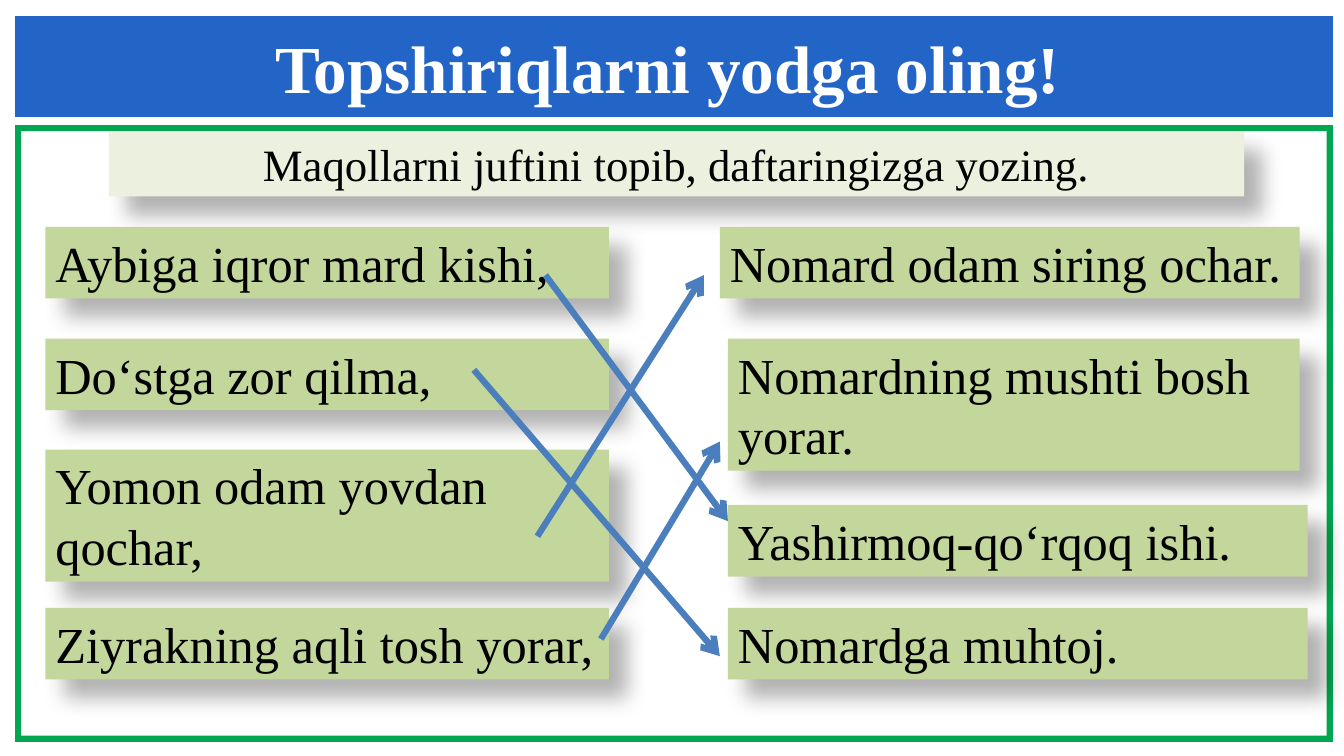
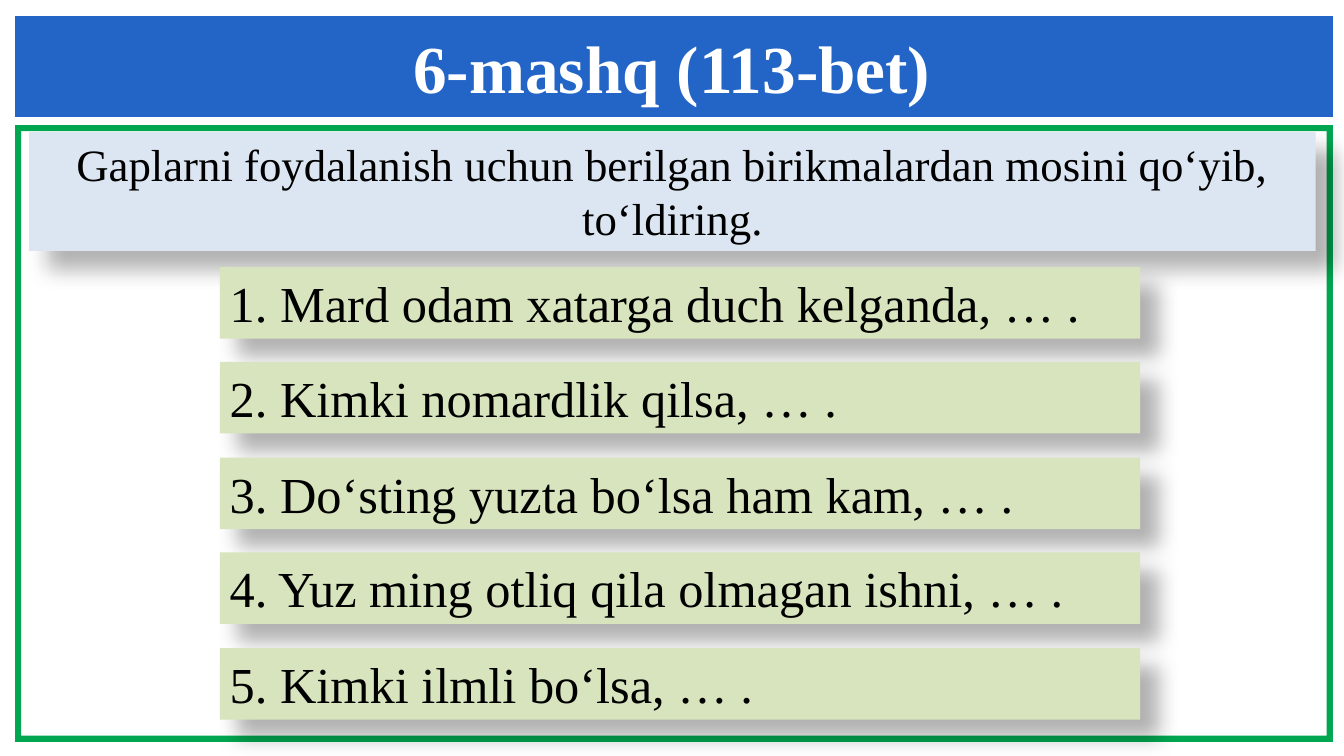
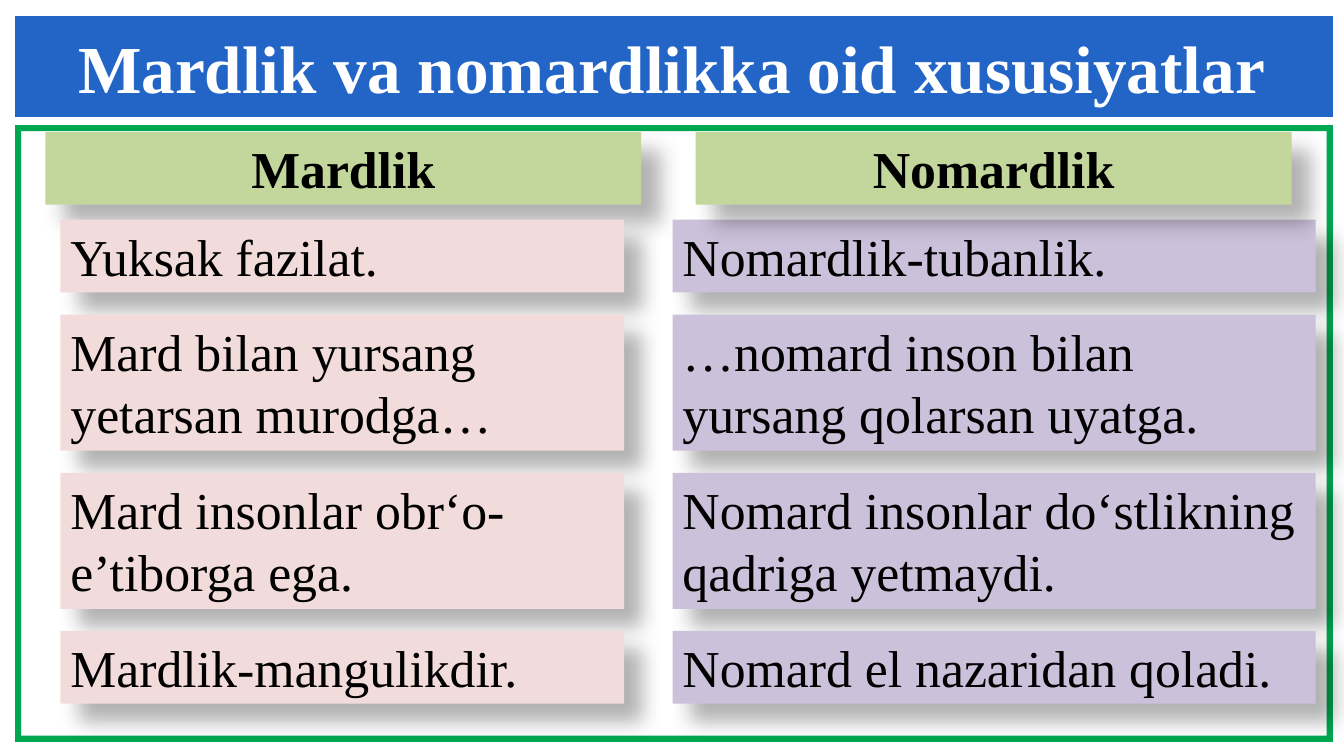
from dataclasses import dataclass

from lxml import etree
from pptx import Presentation
from pptx.dml.color import RGBColor
from pptx.enum.shapes import MSO_CONNECTOR, MSO_SHAPE
from pptx.enum.text import MSO_ANCHOR, MSO_AUTO_SIZE, PP_ALIGN
from pptx.oxml.ns import qn
from pptx.util import Pt

RECT, FRAME = MSO_SHAPE.RECTANGLE, MSO_SHAPE.FRAME
LINE = MSO_CONNECTOR.STRAIGHT
LEFT, MID = PP_ALIGN.LEFT, PP_ALIGN.CENTER
TOP = MSO_ANCHOR.TOP
GROW = MSO_AUTO_SIZE.SHAPE_TO_FIT_TEXT

FONT = "Times New Roman"
PX = 9144  # 100 px to the inch
HEX = {
    "white": "FFFFFF", "black": "000000", "band": "2365C7", "frame": "00A650",
    "arrow": "4B7EBC", "green": "C3D69B", "lime": "D7E4BD", "cream": "EBF1DE",
    "sky": "DCE6F2", "rose": "F2DCDB", "lilac": "CCC1DA",
}


@dataclass(frozen=True)
class Card:
    x: int
    y: int
    w: int
    h: int
    fill: str
    text: str
    size: int = 36
    align: PP_ALIGN = LEFT
    bold: bool = False
    hang: int = 0


@dataclass(frozen=True)
class Arrow:
    x1: int
    y1: int
    x2: int
    y2: int


def tint(name: str) -> RGBColor:
    return RGBColor.from_string(HEX[name])


def add_block(slide, kind, x: int, y: int, w: int, h: int, fill: str):
    block = slide.shapes.add_shape(kind, x * PX, y * PX, w * PX, h * PX)
    block.fill.solid()
    block.fill.fore_color.rgb = tint(fill)
    block.line.fill.background()
    block.shadow.inherit = False
    return block


def set_text(box, text: str, size: int, ink: str, align: PP_ALIGN,
             bold: bool = False, hang: int = 0) -> None:
    frame = box.text_frame
    frame.text = text
    frame.word_wrap = True
    frame.auto_size = GROW
    frame.vertical_anchor = TOP
    for para in frame.paragraphs:
        para.alignment = align
        if hang:
            props = para._p.get_or_add_pPr()
            props.set("marL", str(hang * PX))
            props.set("indent", str(-hang * PX))
        for run in para.runs:
            run.font.name = FONT
            run.font.size = Pt(size)
            run.font.bold = bold
            run.font.color.rgb = tint(ink)


def cast_shade(block) -> None:
    effects = block._element.spPr.find(qn("a:effectLst"))
    shade = etree.SubElement(
        effects, qn("a:outerShdw"), blurRad=str(Pt(15)), dist=str(Pt(18)),
        dir=str(45 * 60000), algn="tl", rotWithShape="0")
    color = etree.SubElement(shade, qn("a:srgbClr"), val=HEX["black"])
    etree.SubElement(color, qn("a:alpha"), val="30000")


def add_card(slide, card: Card) -> None:
    block = add_block(slide, RECT, card.x, card.y, card.w, card.h, card.fill)
    cast_shade(block)
    set_text(block, card.text, card.size, "black", card.align, card.bold, card.hang)


def add_arrow(slide, arrow: Arrow) -> None:
    link = slide.shapes.add_connector(
        LINE, arrow.x1 * PX, arrow.y1 * PX, arrow.x2 * PX, arrow.y2 * PX)
    link.line.color.rgb = tint("arrow")
    link.line.width = Pt(4.5)
    etree.SubElement(link.line._get_or_add_ln(), qn("a:tailEnd"), type="arrow")
    etree.SubElement(link._element.spPr, qn("a:effectLst"))


def add_page(deck, title: str, x: int = 21, w: int = 1291):
    """Add a slide with the green frame, blue band and title."""
    slide = deck.slides.add_slide(deck.slide_layouts[6])
    frame = add_block(slide, FRAME, 15, 124, 1307, 612, "frame")
    frame.adjustments[0] = 0.01
    add_block(slide, RECT, 15, 16, 1307, 100, "band")
    box = slide.shapes.add_textbox(x * PX, 21 * PX, w * PX, 91 * PX)
    set_text(box, title, 48, "white", MID, True)
    return slide


def add_pairs(deck) -> None:
    slide = add_page(deck, "Topshiriqlarni yodga oling!", 76, 1173)
    add_card(slide, Card(108, 131, 1126, 64, "cream",
                         "Maqollarni juftini topib, daftaringizga yozing.", 32, MID))
    # Proverb halves: x, y, width, text
    halves = [
        (45, 225, 559, "Aybiga iqror mard kishi,"),
        (45, 336, 559, "Do‘stga zor qilma,"),
        (45, 446, 559, "Yomon odam yovdan\nqochar,"),
        (45, 603, 559, "Ziyrakning aqli tosh yorar,"),
        (714, 225, 575, "Nomard odam siring ochar."),
        (722, 336, 567, "Nomardning mushti bosh\nyorar."),
        (722, 501, 575, "Yashirmoq-qo‘rqoq ishi."),
        (722, 603, 575, "Nomardga muhtoj."),
    ]
    for x, y, w, text in halves:
        h = 71 + 60 * text.count("\n")
        add_card(slide, Card(x, y, w, h, "green", text, hang=81))
    # Matches
    for arrow in (Arrow(596, 634, 714, 438), Arrow(533, 532, 698, 273),
                  Arrow(470, 367, 714, 651), Arrow(541, 273, 722, 517)):
        add_arrow(slide, arrow)


def add_gaps(deck) -> None:
    slide = add_page(deck, "6-mashq (113-bet)")
    task = ("Gaplarni foydalanish uchun berilgan birikmalardan mosini "
            "qo‘yib, to‘ldiring.")
    add_card(slide, Card(29, 131, 1276, 118, "sky", task, 32, MID))
    # Sentences to finish
    lines = [
        "1. Mard odam xatarga duch kelganda, … .",
        "2. Kimki nomardlik qilsa, … .",
        "3. Do‘sting yuzta bo‘lsa ham kam, … .",
        "4. Yuz ming otliq qila olmagan ishni, … .",
        "5. Kimki ilmli bo‘lsa, … .",
    ]
    for i, text in enumerate(lines):
        add_card(slide, Card(218, 265 + i * 189 // 2, 913, 71, "lime", text, hang=81))


def add_traits(deck) -> None:
    slide = add_page(deck, "Mardlik va nomardlikka oid xususiyatlar")
    # Row heights, first top and gap are shared by both columns
    rows = [
        (72, "Yuksak fazilat.", "Nomardlik-tubanlik."),
        (135, "Mard bilan yursang yetarsan murodga…",
         "…nomard inson bilan yursang qolarsan uyatga."),
        (135, "Mard insonlar obr‘o-e’tiborga ega.",
         "Nomard insonlar do‘stlikning qadriga yetmaydi."),
        (72, "Mardlik-mangulikdir.", "Nomard el nazaridan qoladi."),
    ]
    top, gap = 218, 22
    add_card(slide, Card(45, 131, 591, 72, "green", "Mardlik", 37, MID, True))
    for h, brave, base in rows:
        add_card(slide, Card(60, top, 559, h, "rose", brave, 37))
        add_card(slide, Card(667, top, 638, h, "lilac", base, 37))
        top += h + gap
    add_card(slide, Card(690, 131, 591, 72, "green", "Nomardlik", 37, MID, True))


def main() -> None:
    deck = Presentation()
    deck.slide_width = 1333 * PX
    deck.slide_height = 750 * PX
    add_pairs(deck)
    add_gaps(deck)
    add_traits(deck)
    deck.save("out.pptx")


if __name__ == "__main__":
    main()
